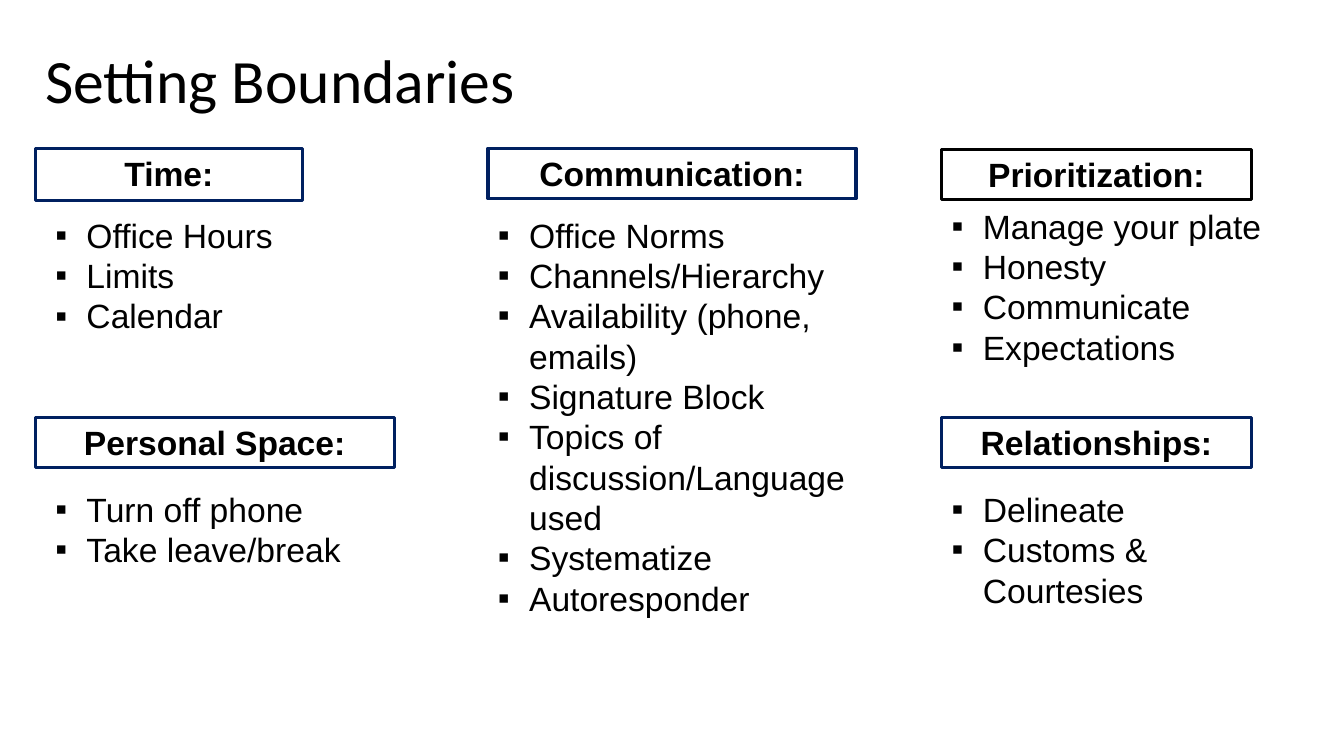
from lxml import etree
from pptx import Presentation
from pptx.dml.color import RGBColor
from pptx.enum.shapes import MSO_SHAPE
from pptx.enum.text import MSO_ANCHOR, MSO_AUTO_SIZE, PP_ALIGN
from pptx.oxml.ns import qn
from pptx.util import Inches, Pt

BLACK = RGBColor(0x00, 0x00, 0x00)
NAVY = RGBColor(0x00, 0x20, 0x60)
BULLET_INDENT = Inches(0.31)

# heading, line colour, heading box, list box, items
TOPICS = [
    ("Time:", NAVY, (0.35, 1.47, 2.65, 0.52), (0.45, 2.08, 2.46, 1.31),
     ["Office Hours", "Limits", "Calendar"]),
    ("Personal Space:", NAVY, (0.35, 4.14, 3.56, 0.5), (0.45, 4.8, 3.47, 0.91),
     ["Turn off phone", "Take leave/break"]),
    ("Communication:", NAVY, (4.84, 1.47, 3.65, 0.5), (4.84, 2.08, 3.83, 4.14),
     ["Office Norms", "Channels/Hierarchy", "Availability (phone, emails)",
      "Signature Block", "Topics of discussion/Language used",
      "Systematize", "Autoresponder"]),
    ("Prioritization:", BLACK, (9.34, 1.48, 3.07, 0.5), (9.34, 1.99, 3.83, 1.72),
     ["Manage your plate", "Honesty", "Communicate", "Expectations"]),
    ("Relationships:", NAVY, (9.34, 4.14, 3.07, 0.5), (9.34, 4.8, 3.47, 1.31),
     ["Delineate", "Customs & Courtesies"]),
]


def add_run(paragraph, text, size=24, font="Arial", bold=False):
    run = paragraph.add_run()
    run.text = text
    run.font.name = font
    run.font.size = Pt(size)
    run.font.bold = bold
    run.font.color.rgb = BLACK


def add_text_box(slide, box):
    frame = slide.shapes.add_textbox(*map(Inches, box)).text_frame
    frame.word_wrap = True
    return frame


def add_title(slide, box, text):
    frame = add_text_box(slide, box)
    frame.vertical_anchor = MSO_ANCHOR.MIDDLE
    paragraph = frame.paragraphs[0]
    paragraph.line_spacing = 0.9
    add_run(paragraph, text, size=44, font="Calibri")


def add_heading(slide, box, text, line_color):
    shape = slide.shapes.add_shape(MSO_SHAPE.RECTANGLE, *map(Inches, box))
    shape.shadow.inherit = False
    shape.fill.background()
    shape.line.color.rgb = line_color
    shape.line.width = Pt(2.25)
    frame = shape.text_frame
    frame.word_wrap = True
    frame.auto_size = MSO_AUTO_SIZE.SHAPE_TO_FIT_TEXT
    frame.vertical_anchor = MSO_ANCHOR.TOP
    paragraph = frame.paragraphs[0]
    paragraph.alignment = PP_ALIGN.CENTER
    add_run(paragraph, text, bold=True)


def set_bullet(paragraph):
    properties = paragraph._p.get_or_add_pPr()
    properties.set("marL", str(BULLET_INDENT))
    properties.set("indent", str(-BULLET_INDENT))
    etree.SubElement(properties, qn("a:buFont")).set("typeface", "Arial")
    etree.SubElement(properties, qn("a:buChar")).set("char", "▪")


def add_bullet_list(slide, box, items):
    frame = add_text_box(slide, box)
    frame.auto_size = MSO_AUTO_SIZE.SHAPE_TO_FIT_TEXT
    for index, item in enumerate(items):
        paragraph = frame.add_paragraph() if index else frame.paragraphs[0]
        set_bullet(paragraph)
        add_run(paragraph, item)


def main():
    presentation = Presentation()
    presentation.slide_width = Inches(13.33)
    presentation.slide_height = Inches(7.5)
    slide = presentation.slides.add_slide(presentation.slide_layouts[6])
    add_title(slide, (0.35, 0.33, 11.5, 0.99), "Setting Boundaries")
    for heading, line_color, heading_box, list_box, items in TOPICS:
        add_heading(slide, heading_box, heading, line_color)
        add_bullet_list(slide, list_box, items)
    presentation.save("out.pptx")


if __name__ == "__main__":
    main()
